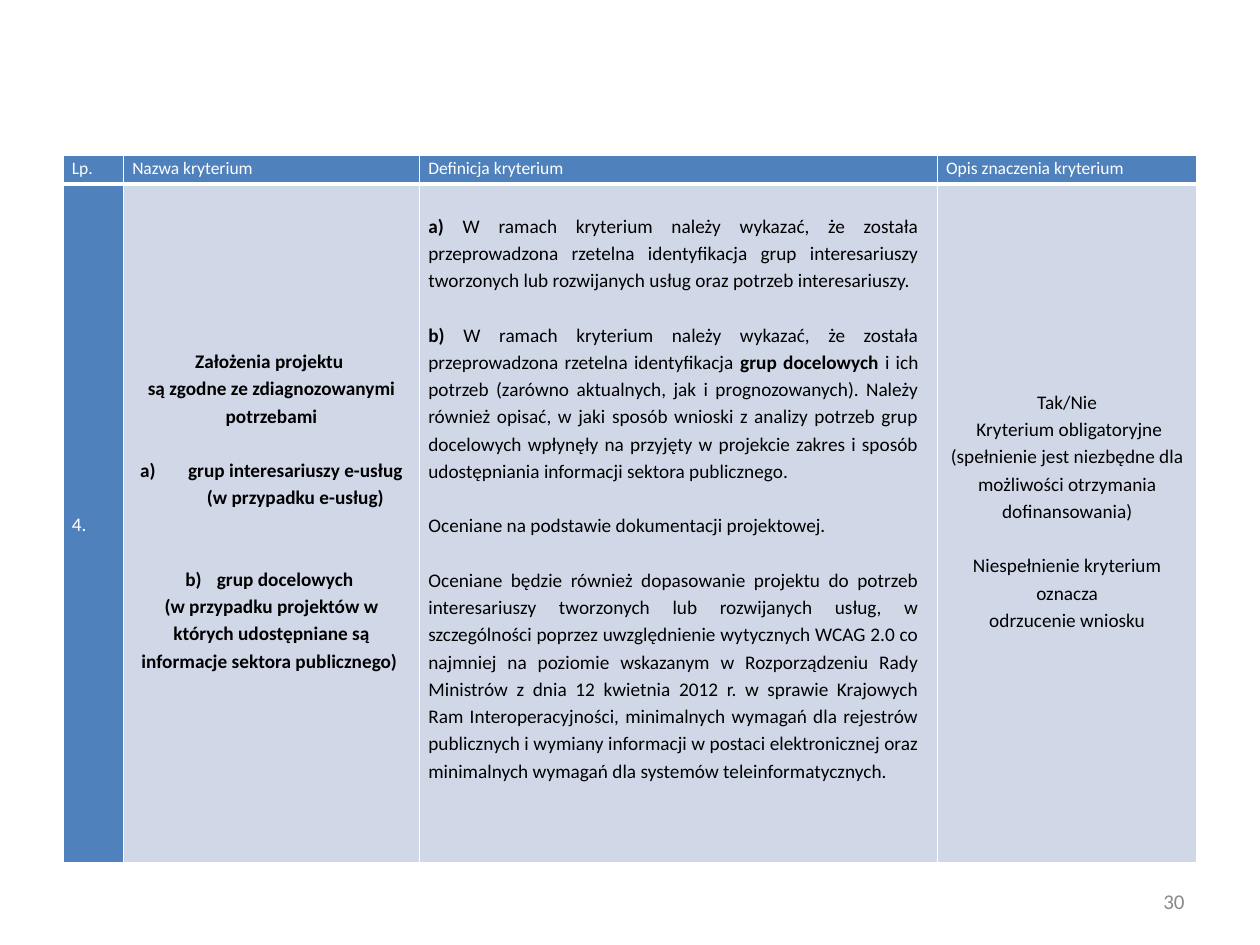
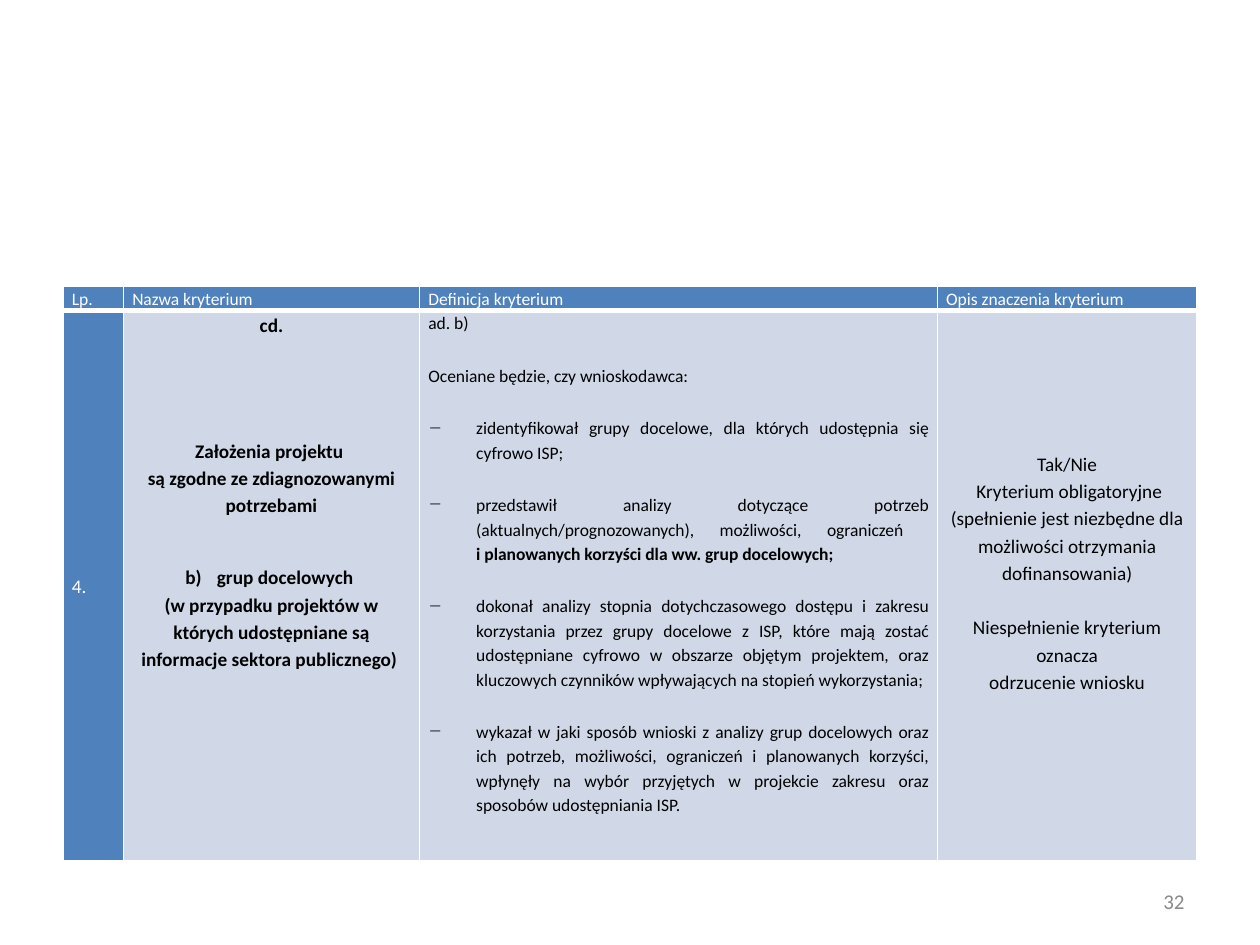
from dataclasses import dataclass

from lxml.etree import SubElement
from pptx import Presentation
from pptx.dml.color import RGBColor
from pptx.enum.text import MSO_ANCHOR as Anchor, PP_ALIGN as Align
from pptx.oxml.ns import qn
from pptx.util import Inches, Pt

# Shared style
FONT = "Calibri"
WHITE, BLACK, GREY = "FFFFFF", "000000", "898989"
BLUE, PALE_BLUE = "4F81BD", "D0D8E8"
COLUMN_WIDTHS = [0.48, 2.35, 4.11, 2.06]
TABLE_LEFT = 0.5
LINE = 15.5  # height in points of one 11 pt text line
CELL_MARGIN = 0.07
HEADERS = ["Lp.", "Nazwa kryterium", "Definicja kryterium", "Opis znaczenia kryterium"]


@dataclass
class Line:
    """One paragraph; ** in the text switches bold on and off."""
    text: str
    before: float = 0
    after: float = 0
    bullet: str = ""
    start: int = 1
    indent: float = 0


@dataclass
class Content:
    """The paragraphs of one cell and how they are set."""
    lines: list
    align: Align = Align.LEFT
    anchor: Anchor = Anchor.MIDDLE
    size: float = 11
    color: str = BLACK
    bold: bool = False
    top: float = 0
    bottom: float = 0
    right: float = CELL_MARGIN


# Wording used on both slides
ASSUMPTIONS = "Założenia projektu \vsą zgodne ze zdiagnozowanymi"
NEEDS = Line("potrzebami")
SIGNIFICANCE = Content([
    Line("Tak/Nie"),
    Line(" Kryterium obligatoryjne"),
    Line("(spełnienie jest niezbędne dla możliwości otrzymania dofinansowania)"),
    Line("Niespełnienie kryterium oznacza", before=LINE),
    Line("odrzucenie wniosku"),
], Align.CENTER, bottom=LINE)
NUMBER = Content([Line("4.")], color=WHITE)


def target_groups(before):
    return [
        Line("grup docelowych ", before=before, bullet="auto", start=2, indent=0.25),
        Line("(w przypadku projektów w których udostępniane są "
             "informacje sektora publicznego) "),
    ]


# Slide 1 wording
NAME_FULL = Content([
    Line(ASSUMPTIONS),
    NEEDS,
    Line("grup interesariuszy e-usług (w przypadku e-usług)",
         before=LINE, bullet="auto", indent=0.38),
    *target_groups(2 * LINE),
], Align.CENTER, bold=True, bottom=LINE)

DEFINITION_FULL = Content([
    Line("**a) **W ramach kryterium należy wykazać, że została przeprowadzona rzetelna "
         "identyfikacja grup interesariuszy tworzonych lub rozwijanych usług oraz potrzeb "
         "interesariuszy. "),
    Line("**b) **W ramach kryterium należy wykazać, że została przeprowadzona rzetelna "
         "identyfikacja **grup docelowych** i ich potrzeb (zarówno aktualnych, jak i "
         "prognozowanych). Należy również opisać, w jaki sposób wnioski z analizy potrzeb "
         "grup docelowych wpłynęły na przyjęty w projekcie zakres i sposób udostępniania "
         "informacji sektora publicznego.", before=LINE),
    Line("Oceniane na podstawie dokumentacji projektowej.", before=LINE),
    Line("Oceniane będzie również dopasowanie projektu do potrzeb interesariuszy tworzonych "
         "lub rozwijanych usług, w szczególności poprzez uwzględnienie wytycznych WCAG 2.0 "
         "co najmniej na poziomie wskazanym w Rozporządzeniu Rady Ministrów z dnia "
         "12 kwietnia 2012 r. w sprawie Krajowych Ram Interoperacyjności, minimalnych "
         "wymagań dla rejestrów publicznych i wymiany informacji w postaci elektronicznej "
         "oraz minimalnych wymagań dla systemów teleinformatycznych.", before=LINE),
], Align.JUSTIFY, top=LINE, bottom=3 * LINE, right=0.15)

# Slide 2 wording
NAME_CONTINUED = Content([
    Line("cd."),
    Line(ASSUMPTIONS, before=10 + 3 * LINE),
    NEEDS,
    *target_groups(10 + LINE),
], Align.CENTER, Anchor.TOP, bold=True)

ASSESSED_POINTS = [
    "zidentyfikował grupy docelowe, dla których udostępnia się cyfrowo ISP;",
    "przedstawił analizy dotyczące potrzeb (aktualnych/prognozowanych), możliwości, "
    "ograniczeń \vi planowanych korzyści dla ww. grup docelowych;",
    "dokonał analizy stopnia dotychczasowego dostępu i zakresu korzystania przez grupy "
    "docelowe z ISP, które mają zostać udostępniane cyfrowo w obszarze objętym projektem, "
    "oraz kluczowych czynników wpływających na stopień wykorzystania;",
    "wykazał w jaki sposób wnioski z analizy grup docelowych oraz ich potrzeb, możliwości, "
    "ograniczeń i planowanych korzyści, wpłynęły na wybór przyjętych w projekcie zakresu "
    "oraz sposobów udostępniania ISP. ",
]
DEFINITION_CONTINUED = Content([
    Line("ad. b) ", after=10),
    Line("Oceniane będzie, czy wnioskodawca: ", before=6, after=10),
    *[Line(point, before=6, after=10, bullet="−", indent=0.38) for point in ASSESSED_POINTS],
], Align.JUSTIFY, Anchor.TOP, size=10)


def rgb(color):
    return RGBColor.from_string(color)


def style_font(font, size, color, bold=False):
    font.name = FONT
    font.size = Pt(size)
    font.bold = bold
    font.color.rgb = rgb(color)


def add_bullet(paragraph, line):
    properties = paragraph._p.get_or_add_pPr()
    properties.set("marL", str(Inches(line.indent)))
    properties.set("indent", str(-Inches(line.indent)))
    if line.bullet == "auto":
        SubElement(properties, qn("a:buAutoNum"), type="alphaLcParenR", startAt=str(line.start))
    else:
        SubElement(properties, qn("a:buChar"), char=line.bullet)


def write_line(paragraph, line, content):
    paragraph.alignment = content.align
    paragraph.line_spacing = 1.15
    paragraph.space_before = Pt(line.before)
    paragraph.space_after = Pt(line.after)
    if line.bullet:
        add_bullet(paragraph, line)
    parts = line.text.split("**")
    paragraph.text = parts[0]
    for part in parts[1:]:
        paragraph.add_run().text = part
    first = 0 if parts[0] else 1
    for index, run in enumerate(paragraph.runs, start=first):
        style_font(run.font, content.size, content.color, content.bold or index % 2 == 1)
    for line_break in paragraph._p.findall(qn("a:br")):
        SubElement(line_break, qn("a:rPr"), sz=str(content.size * 100))


def set_borders(cell, bottom_width):
    properties = cell._tc.get_or_add_tcPr()
    for side, width in zip("LRTB", (1, 1, 1, bottom_width)):
        border = SubElement(properties, qn(f"a:ln{side}"), w=str(Pt(width)))
        fill = SubElement(border, qn("a:solidFill"))
        SubElement(fill, qn("a:srgbClr"), val=WHITE)


def fill_cell(cell, content, background, bottom_width=1):
    set_borders(cell, bottom_width)
    cell.fill.solid()
    cell.fill.fore_color.rgb = rgb(background)
    cell.vertical_anchor = content.anchor
    cell.margin_left, cell.margin_right = Inches(CELL_MARGIN), Inches(content.right)
    cell.margin_top, cell.margin_bottom = Pt(content.top), Pt(content.bottom)
    frame = cell.text_frame
    for index, line in enumerate(content.lines):
        paragraph = frame.add_paragraph() if index else frame.paragraphs[0]
        write_line(paragraph, line, content)


def add_criteria_table(slide, top, row_heights, contents):
    shape = slide.shapes.add_table(2, len(HEADERS), Inches(TABLE_LEFT), Inches(top),
                                   Inches(sum(COLUMN_WIDTHS)), Inches(sum(row_heights)))
    table = shape.table
    table.first_row = table.horz_banding = False
    for column, width in zip(table.columns, COLUMN_WIDTHS):
        column.width = Inches(width)
    for row, height in zip(table.rows, row_heights):
        row.height = Inches(height)
    for index, (header, content) in enumerate(zip(HEADERS, contents)):
        heading = Content([Line(header)], anchor=Anchor.TOP, size=10, color=WHITE)
        fill_cell(table.cell(0, index), heading, BLUE, bottom_width=3)
        fill_cell(table.cell(1, index), content, PALE_BLUE if index else BLUE)


def add_page_number(slide, number):
    box = slide.shapes.add_textbox(Inches(7.17), Inches(6.95), Inches(2.33), Inches(0.4))
    frame = box.text_frame
    frame.word_wrap = True
    frame.vertical_anchor = Anchor.MIDDLE
    frame.text = str(number)
    paragraph = frame.paragraphs[0]
    paragraph.alignment = Align.RIGHT
    style_font(paragraph.runs[0].font, 12, GREY)


def add_criteria_slide(presentation, number, top, row_heights, name, definition):
    slide = presentation.slides.add_slide(presentation.slide_layouts[6])
    add_page_number(slide, number)
    add_criteria_table(slide, top, row_heights, [NUMBER, name, definition, SIGNIFICANCE])


def main():
    presentation = Presentation()
    presentation.slide_width, presentation.slide_height = Inches(10), Inches(7.5)
    add_criteria_slide(presentation, 30, 1.23, [0.23, 5.39], NAME_FULL, DEFINITION_FULL)
    add_criteria_slide(presentation, 32, 2.27, [0.19, 4.37],
                       NAME_CONTINUED, DEFINITION_CONTINUED)
    presentation.save("out.pptx")


if __name__ == "__main__":
    main()
